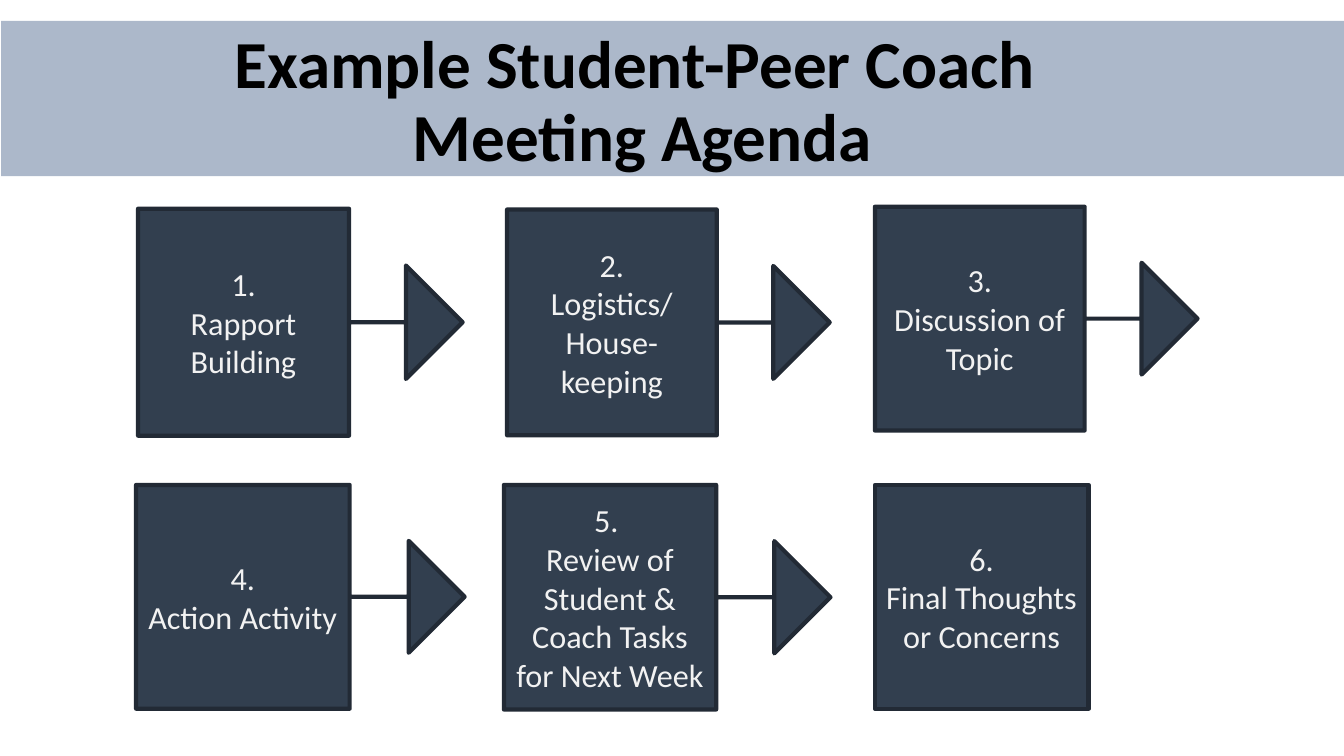
from pptx import Presentation
from pptx.dml.color import RGBColor
from pptx.enum.shapes import MSO_SHAPE
from pptx.enum.text import MSO_ANCHOR, MSO_AUTO_SIZE, PP_ALIGN
from pptx.util import Cm, Pt

RECT = MSO_SHAPE.RECTANGLE
CALLOUT = MSO_SHAPE.RIGHT_ARROW_CALLOUT
PROCESS = MSO_SHAPE.FLOWCHART_PROCESS
MIDDLE = MSO_ANCHOR.MIDDLE
CENTER = PP_ALIGN.CENTER
NO_FIT = MSO_AUTO_SIZE.NONE

COLORS = {"band": "ACB8CA", "title": "000000", "box": "323F4F",
          "edge": "222A35", "text": "F2F2F2"}
CALLOUT_ADJ = (0, 0.25, 0.25, 0.65)
STEPS = [
    ((3.48, 5.26, 8.18, 5.72), CALLOUT, ["1.", "Rapport Building"]),
    ((12.78, 5.28, 8.13, 5.69), CALLOUT,
     ["2.", "Logistics/", "House-", "keeping"]),
    ((22.05, 5.21, 8.13, 5.64), CALLOUT, ["3.", "Discussion of Topic"]),
    ((3.43, 12.22, 8.28, 5.64), CALLOUT, ["4.", "Action Activity"]),
    ((12.7, 12.22, 8.23, 5.66), CALLOUT,
     ["5. ", "Review of Student & Coach Tasks for Next Week"]),
    ((22.05, 12.22, 5.38, 5.64), PROCESS, ["6.", "Final Thoughts or Concerns"]),
]


def rgb(name):
    """Return the palette colour with this name."""
    return RGBColor.from_string(COLORS[name])


def write_text(sp, text, size, color, bold=False, spacing=1.0):
    """Write centred paragraphs into a shape, one per line of text."""
    tf = sp.text_frame
    tf.word_wrap = True
    tf.auto_size = NO_FIT
    tf.vertical_anchor = MIDDLE
    tf.margin_left = tf.margin_right = Cm(0.25)
    tf.margin_top = tf.margin_bottom = Cm(0.13)
    tf.text = text
    for p in tf.paragraphs:
        p.alignment = CENTER
        p.line_spacing = spacing
        for r in p.runs:
            r.font.name = "Calibri"
            r.font.size = Pt(size)
            r.font.bold = bold
            r.font.color.rgb = rgb(color)


def add_box(s, box, kind, fill, edge=None):
    """Add a filled preset shape in the given box."""
    sp = s.shapes.add_shape(kind, *map(Cm, box))
    sp.shadow.inherit = False
    sp.fill.solid()
    sp.fill.fore_color.rgb = rgb(fill)
    if edge:
        sp.line.color.rgb = rgb(edge)
        sp.line.width = Pt(3)
    else:
        sp.line.fill.background()
    return sp


def add_header(s, box, text):
    """Place the title over a full-width colour band."""
    left, top, width, height = box
    band = add_box(s, box, RECT, "band")
    title = s.shapes.title
    title._element.addprevious(band._element)
    title.left, title.top = Cm(left - 4.5), Cm(top + 0.23)
    title.width, title.height = Cm(width + 7.49), Cm(height - 0.23)
    write_text(title, text, 48, "title", bold=True, spacing=0.9)


def add_step(s, box, kind, lines):
    """Add one agenda step, with an arrow if another step follows."""
    sp = add_box(s, box, kind, "box", "edge")
    if kind == CALLOUT:
        for i, value in enumerate(CALLOUT_ADJ):
            sp.adjustments[i] = value
    write_text(sp, "\n".join(lines), 23, "text")


def main():
    """Build the agenda slide and save it."""
    prs = Presentation()
    prs.slide_width, prs.slide_height = Cm(33.87), Cm(19.05)
    s = prs.slides.add_slide(prs.slide_layouts[5])
    add_header(s, (0.03, 0.53, 33.84, 3.91),
               "Example Student-Peer Coach \vMeeting Agenda")
    for box, kind, lines in STEPS:
        add_step(s, box, kind, lines)
    prs.save("out.pptx")


if __name__ == "__main__":
    main()
